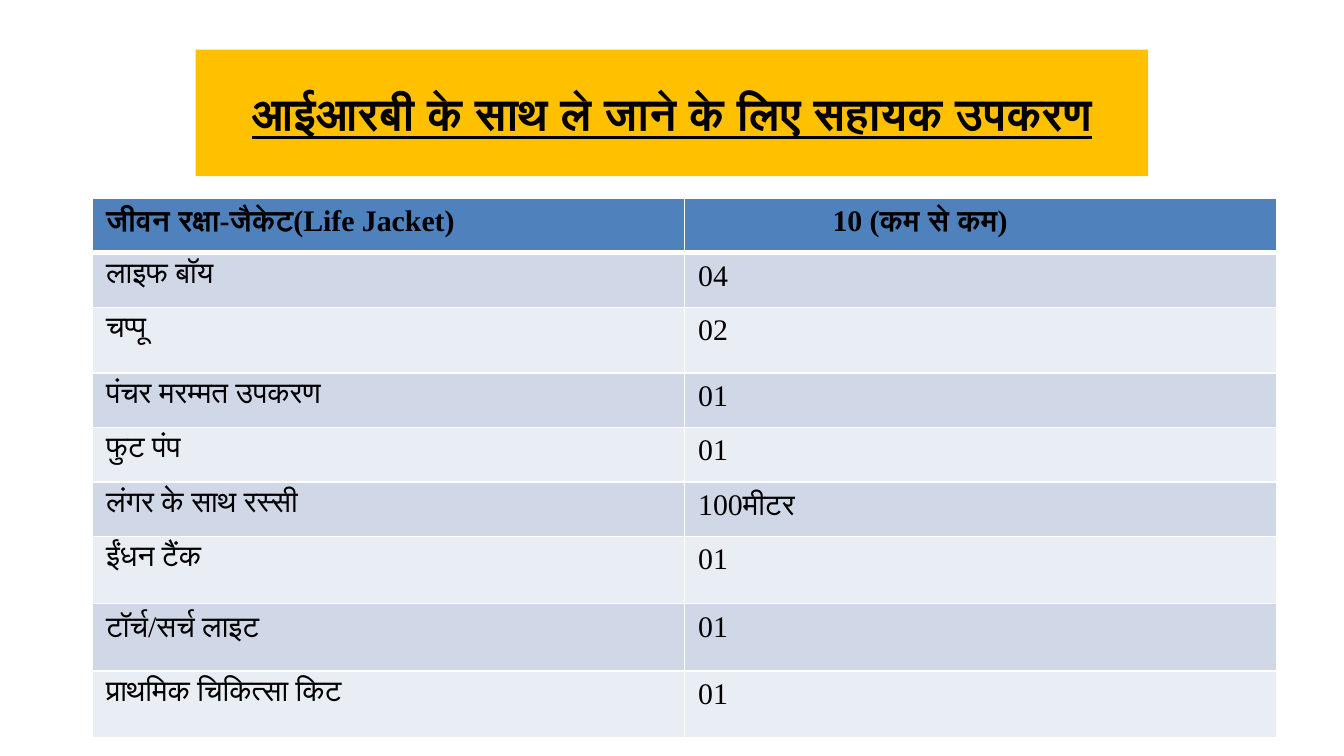
from lxml import etree
from pptx import Presentation
from pptx import util as u
from pptx.dml.color import RGBColor
from pptx.enum import shapes, text
from pptx.oxml import ns

Cm, Pt = u.Cm, u.Pt
FONT = "Times New Roman"
COLORS = {
    "title": "FFC000",
    "header": "4F81BD",
    "odd": "D0D8E8",
    "even": "E9EDF4",
    "line": "FFFFFF",
    "text": "000000",
}
ROW_HEIGHTS = [1.03, 1.03, 1.24, 1.03, 1.03, 1.03, 1.27, 1.27, 1.27]
EQUIPMENT = [
    ("जीवन रक्षा-जैकेट(Life Jacket)", "10 (कम से कम)"),
    ("लाइफ बॉय", "04"),
    ("चप्पू", "02"),
    ("पंचर मरम्मत उपकरण", "01"),
    ("फुट पंप", "01"),
    ("लंगर के साथ रस्सी", "100मीटर"),
    ("ईंधन टैंक", "01"),
    ("टॉर्च/सर्च लाइट", "01"),
    ("प्राथमिक चिकित्सा किट", "01"),
]


def color(name):
    """Return the named palette colour."""
    return RGBColor.from_string(COLORS[name])


def write(tf, content, size, bold=False, underline=None):
    """Write one paragraph in the slide's font."""
    p = tf.paragraphs[0]
    p.text = content
    font = p.font
    font.name, font.size, font.bold, font.underline = FONT, Pt(size), bold, underline
    font.color.rgb = color("text")
    return p


def set_borders(cell, top, bottom):
    """Draw the four cell borders, with top and bottom widths in points."""
    tcPr = cell._tc.get_or_add_tcPr()
    sides = [("lnL", 1), ("lnR", 1), ("lnT", top), ("lnB", bottom)]
    for i, (side, width) in enumerate(sides):
        ln = etree.Element(ns.qn(f"a:{side}"), w=str(Pt(width)))
        fill = etree.SubElement(ln, ns.qn("a:solidFill"))
        etree.SubElement(fill, ns.qn("a:srgbClr"), val=COLORS["line"])
        tcPr.insert(i, ln)


def add_title(s, left, top, width, height):
    """Add the title banner in the given box."""
    sp = s.shapes.add_shape(shapes.MSO_SHAPE.RECTANGLE, left, top, width, height)
    sp.shadow.inherit = False
    sp.fill.solid()
    sp.fill.fore_color.rgb = color("title")
    sp.line.fill.background()
    tf = sp.text_frame
    tf.word_wrap = True
    tf.vertical_anchor = text.MSO_ANCHOR.MIDDLE
    p = write(tf, "आईआरबी के साथ ले जाने के लिए सहायक उपकरण", 24, True, True)
    p.alignment = text.PP_ALIGN.CENTER


def add_equipment_table(s, left, top, width, height):
    """Add the equipment table, sharing the box height among its rows."""
    table = s.shapes.add_table(len(EQUIPMENT), 2, left, top, width, height).table
    scale = height / sum(ROW_HEIGHTS)
    for r, row in enumerate(EQUIPMENT):
        table.rows[r].height = round(ROW_HEIGHTS[r] * scale)
        band = "header" if r == 0 else "odd" if r % 2 else "even"
        for c, content in enumerate(row):
            cell = table.cell(r, c)
            cell.fill.solid()
            cell.fill.fore_color.rgb = color(band)
            set_borders(cell, 3 if r == 1 else 1, 3 if r == 0 else 1)
            write(cell.text_frame, content, 16, bold=r == 0)
    heading = table.cell(0, 1).text_frame.paragraphs[0]
    heading._p.get_or_add_pPr().set("marL", str(Cm(2.54)))


def main():
    """Build and save the slide."""
    prs = Presentation()
    prs.slide_width, prs.slide_height = Cm(25.4), Cm(14.29)
    s = prs.slides.add_slide(prs.slide_layouts[6])
    add_title(s, Cm(3.7), Cm(0.94), Cm(18), Cm(2.39))
    add_equipment_table(s, Cm(1.75), Cm(3.75), Cm(22.38), Cm(10.2))
    prs.save("out.pptx")


if __name__ == "__main__":
    main()
